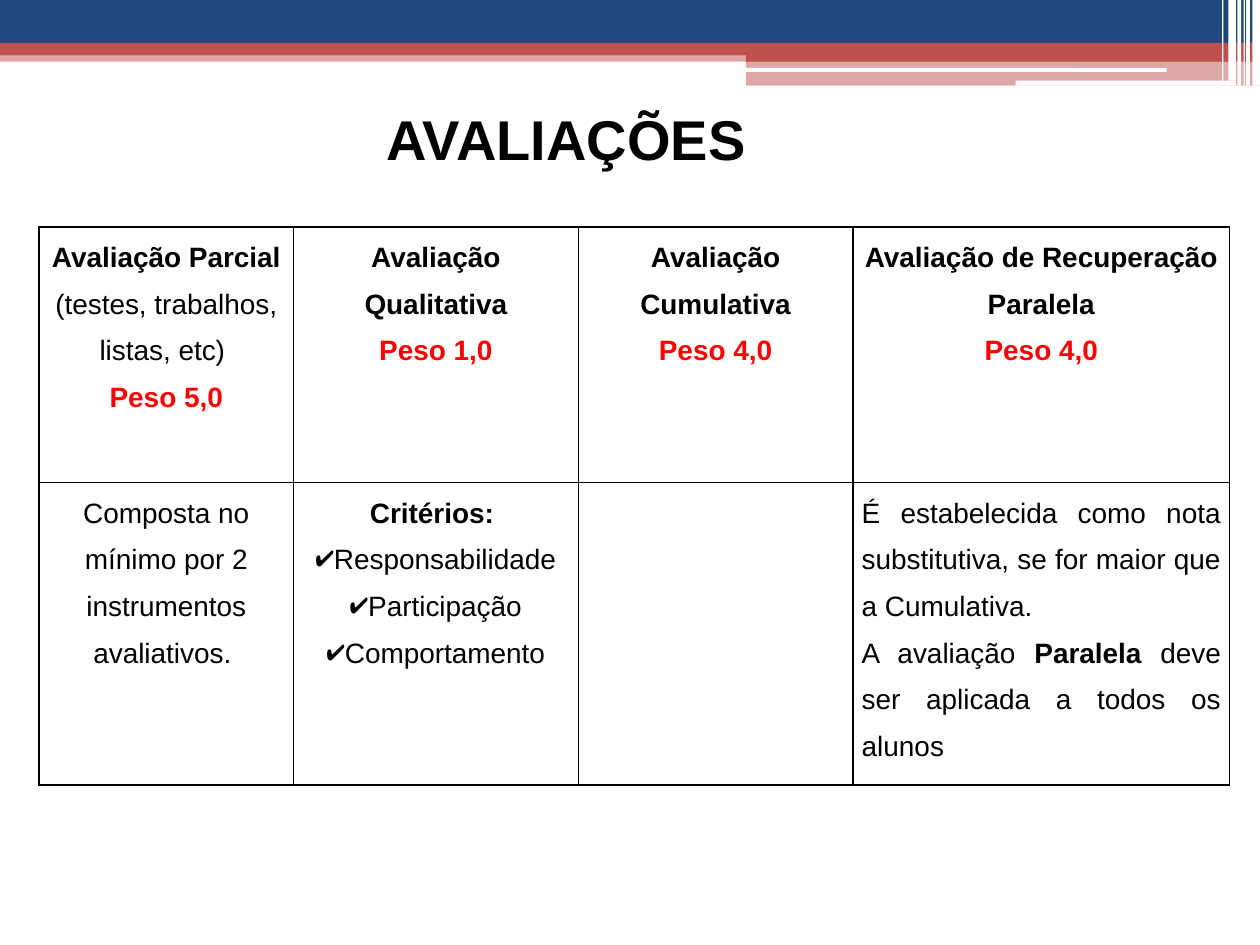
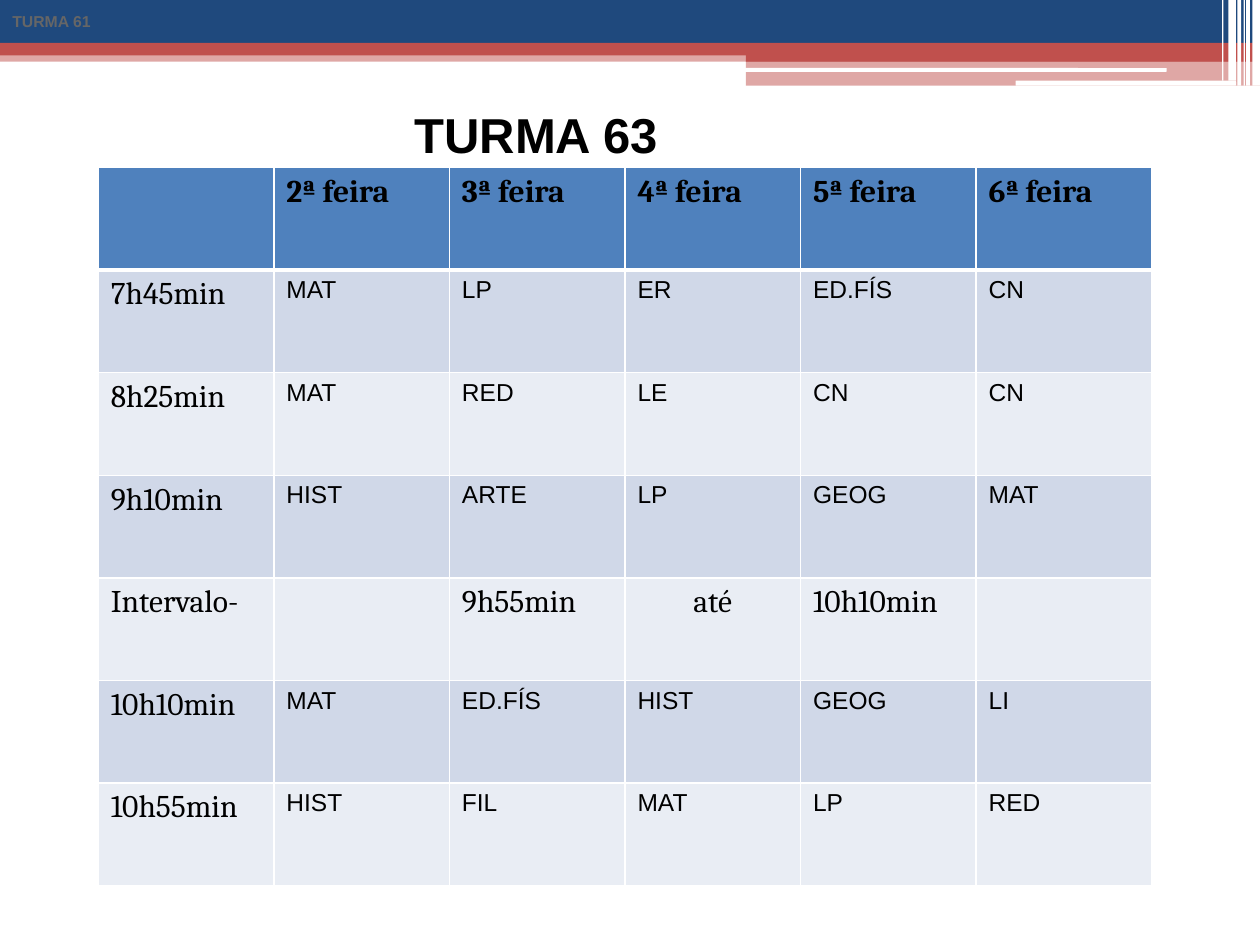
from pptx import Presentation
from pptx.dml.color import RGBColor
from pptx.enum.shapes import MSO_SHAPE as SHAPE
from pptx.enum.text import MSO_ANCHOR as ANCHOR, MSO_AUTO_SIZE as FIT, PP_ALIGN as ALIGN
from pptx.oxml.ns import qn
from pptx.util import Inches, Pt
from lxml.etree import SubElement, Element

COLS, ROWS = 100, 75          # slide grid, every cell a tenth of an inch
CELL = Inches(0.1)
FULL_BAND = (0, 0, COLS, 6.8)

BLACK, WHITE, RED = "000000", "FFFFFF", "FF0000"
NAVY, BRICK, GREY = "1F497D", "C0504D", "666666"
HEAD, ODD, EVEN = "4F81BD", "D0D8E8", "E9EDF4"

TEXT_INSETS = dict(margin_left=CELL, margin_right=CELL,
                   margin_top=CELL // 2, margin_bottom=CELL // 2)
TIGHT_INSETS = dict(margin_left=Inches(0.07), margin_right=Inches(0.07),
                    margin_top=0, margin_bottom=0)

# Cells hold paragraphs: (kind, [(text, bold, colour), ...])
ASSESSMENTS = [
    [
        [("c", [("Avaliação Parcial", True, BLACK)]),
         ("c", [("(testes, trabalhos, listas, etc) ", False, BLACK)]),
         ("c", [("Peso 5,0", True, RED)])],
        [("c", [("Avaliação Qualitativa", True, BLACK)]),
         ("c", [("Peso 1,0", True, RED)])],
        [("c", [("Avaliação Cumulativa", True, BLACK)]),
         ("c", [("Peso 4,0", True, RED)])],
        [("c", [("Avaliação de Recuperação Paralela", True, BLACK)]),
         ("c", [("Peso 4,0", True, RED)])],
    ],
    [
        [("c", [("Composta no mínimo por 2 instrumentos avaliativos. ", False, BLACK)])],
        [("c", [("Critérios: ", True, BLACK)])]
        + [("check", [(name, False, BLACK)])
           for name in ("Responsabilidade", "Participação", "Comportamento")],
        [],
        [("j", [("É estabecida como nota substitutiva, se for maior que a Cumulativa. "
                 .replace("estabecida", "estabelecida"), False, BLACK)]),
         ("j", [("A avaliação ", False, BLACK), ("Paralela ", True, BLACK),
                ("deve ser aplicada a todos os alunos", False, BLACK)])],
    ],
]
ASSESSMENTS[1][3][0] = ("j", [("É estabelecida como nota substitutiva, "
                               "se for maior que a Cumulativa. ", False, BLACK)])

TIMETABLE = [
    ["", "2ª feira", "3ª feira", "4ª feira", "5ª feira", "6ª feira"],
    ["7h45min", "MAT", "LP", "ER", "ED.FÍS", "CN"],
    ["8h25min", "MAT", "RED", "LE", "CN", "CN"],
    ["9h10min", "HIST", "ARTE", "LP", "GEOG", "MAT"],
    ["Intervalo-", "", "9h55min", "até", "10h10min", ""],
    ["10h10min", "MAT", "ED.FÍS", "HIST", "GEOG", "LI"],
    ["10h55min", "HIST", "FIL", "MAT", "LP", "RED"],
]
BREAK_ROW = 4


def rgb(color):
    return RGBColor.from_string(color)


def grid(*cells):
    return [round(n * CELL) for n in cells]


def put(obj, **values):
    for name, value in values.items():
        setattr(obj, name, value)


def add_run(p, text, size, font="Arial", color=BLACK, bold=False):
    r = p.add_run()
    r.text = text
    put(r.font, size=Pt(size), name=font, bold=bold)
    r.font.color.rgb = rgb(color)


def add_bar(slide, box, color, alpha=None, shape=SHAPE.RECTANGLE):
    sp = slide.shapes.add_shape(shape, *grid(*box))
    sp.shadow.inherit = False
    sp.fill.solid()
    sp.fill.fore_color.rgb = rgb(color)
    sp.line.fill.background()
    if alpha:
        clr = sp.fill._xPr.find(".//" + qn("a:srgbClr"))
        SubElement(clr, qn("a:alpha"), val=str(alpha * 1000))
    return sp


def add_band(slide, box):
    """Draw the top band in box and move it to the slide master."""
    x, y, w, h = box
    split = 59.2
    side = w - split
    bars = [
        ((0, 4, w, 0.9), BRICK, 50),
        ((0, 0, w, 3.4), NAVY, None),
        ((0, 3.4, w, 1), BRICK, None),
        ((split, 3.9, side, 1), BRICK, None),
        ((split, 4.8, side, 2), BRICK, 50),
    ]
    rounded = [(59.1, 5.4, 33.5, 0.3), (80.6, 6.4, 17.5, 0.4)]
    slits = [(99.4, 0.6, h), (98.9, 0.3, h), (98.7, 0.1, h),
             (98.2, 0.3, h), (97.5, 0.6, h - 0.4), (97, 0.1, h - 0.4)]
    bars += [(bar, WHITE, None, SHAPE.ROUNDED_RECTANGLE) for bar in rounded]
    bars += [((left, 0, width, height), WHITE, None) for left, width, height in slits]
    tree = slide.slide_layout.slide_master.element.cSld.spTree
    for i, ((bx, by, bw, bh), *look) in enumerate(bars):
        sp = add_bar(slide, (x + bx, y + by, bw, bh), *look)
        tree.insert(2 + i, sp.element)


def add_title(slide, box, text, size):
    sp = slide.shapes.title
    put(sp, **dict(zip(("left", "top", "width", "height"), grid(*box))))
    tf = sp.text_frame
    put(tf, word_wrap=True, auto_size=FIT.SHAPE_TO_FIT_TEXT,
        vertical_anchor=ANCHOR.TOP, **TEXT_INSETS)
    p = tf.paragraphs[0]
    p.alignment = ALIGN.CENTER
    add_run(p, text, size, bold=True)


def add_corner_label(slide, box, text):
    tf = slide.shapes.add_textbox(*grid(*box)).text_frame
    put(tf, word_wrap=True, vertical_anchor=ANCHOR.MIDDLE, **TEXT_INSETS)
    add_run(tf.paragraphs[0], text, 9, color=GREY, bold=True)


def add_grid_table(slide, box, widths, heights):
    table = slide.shapes.add_table(len(heights), len(widths), *grid(*box)).table
    put(table, first_row=False, horz_banding=False)
    for col, width in zip(table.columns, grid(*widths)):
        col.width = width
    for row, height in zip(table.rows, grid(*heights)):
        row.height = height
    return table


def style_cell(cell, insets, line, fill=None, top=1, bottom=1):
    put(cell, **insets)
    if fill:
        cell.fill.solid()
        cell.fill.fore_color.rgb = rgb(fill)
    else:
        cell.fill.background()
    tc_pr = cell._tc.get_or_add_tcPr()
    sides = dict(L=1, R=1, T=top, B=bottom)
    for i, (side, width) in enumerate(sides.items()):
        ln = Element(qn("a:ln" + side), w=str(Pt(width)))
        SubElement(SubElement(ln, qn("a:solidFill")), qn("a:srgbClr"), val=line)
        tc_pr.insert(i, ln)


def add_check(p):
    ppr = p._p.get_or_add_pPr()
    put_indent = dict(marL="0", indent=str(-Inches(0.11)))
    for name, value in put_indent.items():
        ppr.set(name, value)
    SubElement(SubElement(ppr, qn("a:buClr")), qn("a:srgbClr"), val=BLACK)
    SubElement(ppr, qn("a:buChar"), char="✔")


def add_assessments(slide, box):
    table = add_grid_table(slide, box, (20.2, 22.6, 21.8, 29.9), (20.3, 24))
    for r, row in enumerate(ASSESSMENTS):
        for c, paragraphs in enumerate(row):
            cell = table.cell(r, c)
            style_cell(cell, TIGHT_INSETS, BLACK)
            tf = cell.text_frame
            for i, (kind, runs) in enumerate(paragraphs):
                p = tf.add_paragraph() if i else tf.paragraphs[0]
                put(p, line_spacing=1.5,
                    alignment=ALIGN.JUSTIFY if kind == "j" else ALIGN.CENTER)
                if kind == "check":
                    add_check(p)
                for text, bold, color in runs:
                    add_run(p, text, 16, color=color, bold=bold)


def add_timetable(slide, box):
    rows, cols = len(TIMETABLE), len(TIMETABLE[0])
    table = add_grid_table(slide, box, [box[2] / cols] * cols, [box[3] / rows] * rows)
    for r, row in enumerate(TIMETABLE):
        fill = HEAD if r == 0 else ODD if r % 2 else EVEN
        for c, text in enumerate(row):
            cell = table.cell(r, c)
            style_cell(cell, TEXT_INSETS, WHITE, fill,
                       top=3 if r == 1 else 1, bottom=3 if r == 0 else 1)
            if not text:
                continue
            p = cell.text_frame.paragraphs[0]
            if text == "até":
                p.alignment = ALIGN.CENTER
            is_label = r in (0, BREAK_ROW) or c == 0
            size, font = (18, "Cambria") if is_label else (14, "Arial")
            add_run(p, text, size, font, bold=r == 0)


def main():
    prs = Presentation()
    prs.slide_width, prs.slide_height = grid(COLS, ROWS)
    title_only = prs.slide_layouts[5]

    s = prs.slides.add_slide(title_only)
    add_band(s, FULL_BAND)
    add_assessments(s, (3.1, 18, 94.5, 44.3))
    add_title(s, (21.1, 7.8, 47.7, 6.4), "AVALIAÇÕES", 32)

    s = prs.slides.add_slide(title_only)
    add_corner_label(s, (0, 0, 20, 3.4), "TURMA 61")
    add_title(s, (15.6, 7.8, 53.9, 5.7), "TURMA 63", 28)
    add_timetable(s, (7.8, 13.3, 83.6, 57))

    prs.save("out.pptx")


if __name__ == "__main__":
    main()
